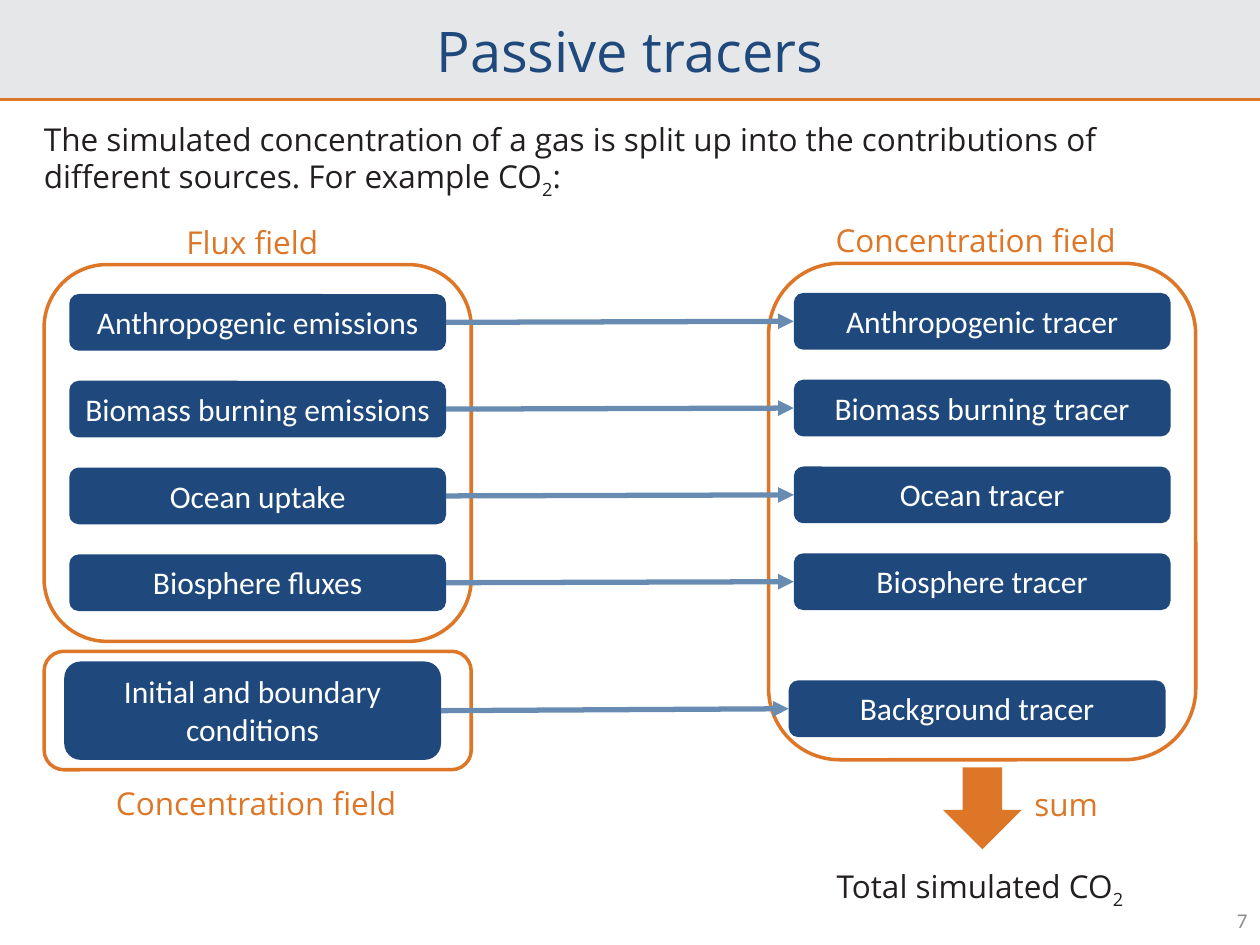
from dataclasses import dataclass

from lxml import etree
from pptx import Presentation
from pptx.dml.color import RGBColor
from pptx.enum import shapes, text
from pptx.oxml import ns
from pptx.util import Pt


@dataclass(frozen=True)
class Theme:
    navy: str = "1F497D"
    steel: str = "688CB1"
    amber: str = "DD7626"
    pale: str = "E6E7E8"
    ink: str = "231F20"
    gray: str = "8D8D8D"
    white: str = "FFFFFF"
    head: str = "Open Sans"
    body: str = "Calibri"
    large: int = 32
    base: int = 18
    small: int = 12


class Deck:
    def __init__(self, theme):
        self.theme = theme
        self.prs = Presentation()
        self.prs.slide_width, self.prs.slide_height = Pt(720), Pt(540)
        self.slide = self.prs.slides.add_slide(self.prs.slide_layouts[5])

    def paint(self, fill, color):
        fill.solid()
        fill.fore_color.rgb = RGBColor.from_string(color)

    def words(self, frame, parts, color, font, size, align):
        para = frame.paragraphs[0]
        para.alignment = align
        for part in parts:
            run = para.add_run()
            run.text = part
            run.font.name = font
            run.font.size = Pt(size)
            run.font.color.rgb = RGBColor.from_string(color)
            if part == "2":
                run.font._element.set("baseline", "-25000")

    def title(self, name, height):
        t = self.theme
        bar = self.slide.shapes.title
        bar.left, bar.top, bar.width, bar.height = Pt(0), Pt(0), Pt(720), Pt(height)
        self.paint(bar.fill, t.pale)
        frame = bar.text_frame
        frame.auto_size = text.MSO_AUTO_SIZE.NONE
        frame.vertical_anchor = text.MSO_ANCHOR.MIDDLE
        self.words(frame, [name], t.navy, t.head, t.large, text.PP_ALIGN.CENTER)

    def label(self, area, parts, color, wrap=False):
        t = self.theme
        frame = self.slide.shapes.add_textbox(*map(Pt, area)).text_frame
        frame.word_wrap = wrap
        frame.auto_size = text.MSO_AUTO_SIZE.SHAPE_TO_FIT_TEXT
        self.words(frame, parts, color, t.head, t.base, text.PP_ALIGN.LEFT)

    def number(self, area, name):
        t = self.theme
        frame = self.slide.shapes.add_textbox(*map(Pt, area)).text_frame
        frame.word_wrap = True
        frame.vertical_anchor = text.MSO_ANCHOR.MIDDLE
        self.words(frame, [name], t.gray, t.body, t.small, text.PP_ALIGN.RIGHT)

    def shape(self, kind, area):
        item = self.slide.shapes.add_shape(kind, *map(Pt, area))
        item.shadow.inherit = False
        return item

    def box(self, area, name):
        t = self.theme
        item = self.shape(shapes.MSO_SHAPE.ROUNDED_RECTANGLE, area)
        self.paint(item.fill, t.navy)
        item.line.fill.background()
        frame = item.text_frame
        frame.word_wrap = True
        frame.vertical_anchor = text.MSO_ANCHOR.TOP
        frame.auto_size = text.MSO_AUTO_SIZE.SHAPE_TO_FIT_TEXT
        self.words(frame, [name], t.white, t.body, t.base, text.PP_ALIGN.CENTER)
        return item

    def ring(self, area):
        item = self.shape(shapes.MSO_SHAPE.ROUNDED_RECTANGLE, area)
        item.fill.background()
        self.paint(item.line.fill, self.theme.amber)
        item.line.width = Pt(2)

    def arrow(self, area):
        item = self.shape(shapes.MSO_SHAPE.DOWN_ARROW, area)
        self.paint(item.fill, self.theme.amber)
        item.line.fill.background()

    def line(self, ends, color, width):
        item = self.slide.shapes.add_connector(
            shapes.MSO_CONNECTOR.STRAIGHT, *map(Pt, ends))
        self.paint(item.line.fill, color)
        item.line.width = Pt(width)
        etree.SubElement(item._element.spPr, ns.qn("a:effectLst"))
        return item

    def link(self, start, end):
        item = self.line((0, 0, 0, 0), self.theme.steel, 3)
        item.begin_connect(start, 3)
        item.end_connect(end, 1)
        edge = item._element.spPr.find(ns.qn("a:ln"))
        etree.SubElement(edge, ns.qn("a:tailEnd"), type="triangle")


def main():
    t = Theme()
    deck = Deck(t)
    deck.title("Passive tracers", 57)
    deck.line((0, 57, 720, 57), t.amber, 1.5)
    deck.label((18, 64.8, 683.3, 51),
               ["The simulated concentration of a gas is split up into the "
                "contributions of different sources. For example CO", "2", ":"],
               t.ink, wrap=True)

    wide, tall, step = 215.3, 32.4, 49.6
    pairs = [
        ("Anthropogenic emissions", "Anthropogenic tracer"),
        ("Biomass burning emissions", "Biomass burning tracer"),
        ("Ocean uptake", "Ocean tracer"),
        ("Biosphere fluxes", "Biosphere tracer"),
    ]
    rows = []
    for i, (flux, tracer) in enumerate(pairs):
        rows.append((deck.box((39.6, 168 + i * step, wide, tall), flux),
                     deck.box((453.6, 167.4 + i * step, wide, tall), tracer)))
    rows.append((deck.box((36.7, 378, wide, 56.2), "Initial and boundary conditions"),
                 deck.box((450.7, 388.8, wide, tall), "Background tracer")))

    for area in [(25.2, 151.2, 244.1, 215.3),
                 (439.2, 150.5, 244.1, 283.7),
                 (25.2, 372.2, 244.1, 67.7)]:
        deck.ring(area)
    for start, end in rows:
        deck.link(start, end)

    deck.arrow((538.9, 438.5, 45, 46.8))
    for area, name in [((99.4, 123.8, 90, 28.8), "Flux field"),
                       ((470.4, 122.9, 176.4, 28.8), "Concentration field"),
                       ((59.2, 444.5, 176.4, 28.8), "Concentration field"),
                       ((584, 445, 51.1, 28.8), "sum")]:
        deck.label(area, [name], t.amber)
    deck.label((471, 491.8, 180.7, 28.8), ["Total simulated CO", "2"], t.ink)
    deck.number((558, 511.2, 162, 28.8), "7")
    deck.prs.save("out.pptx")


if __name__ == "__main__":
    main()
